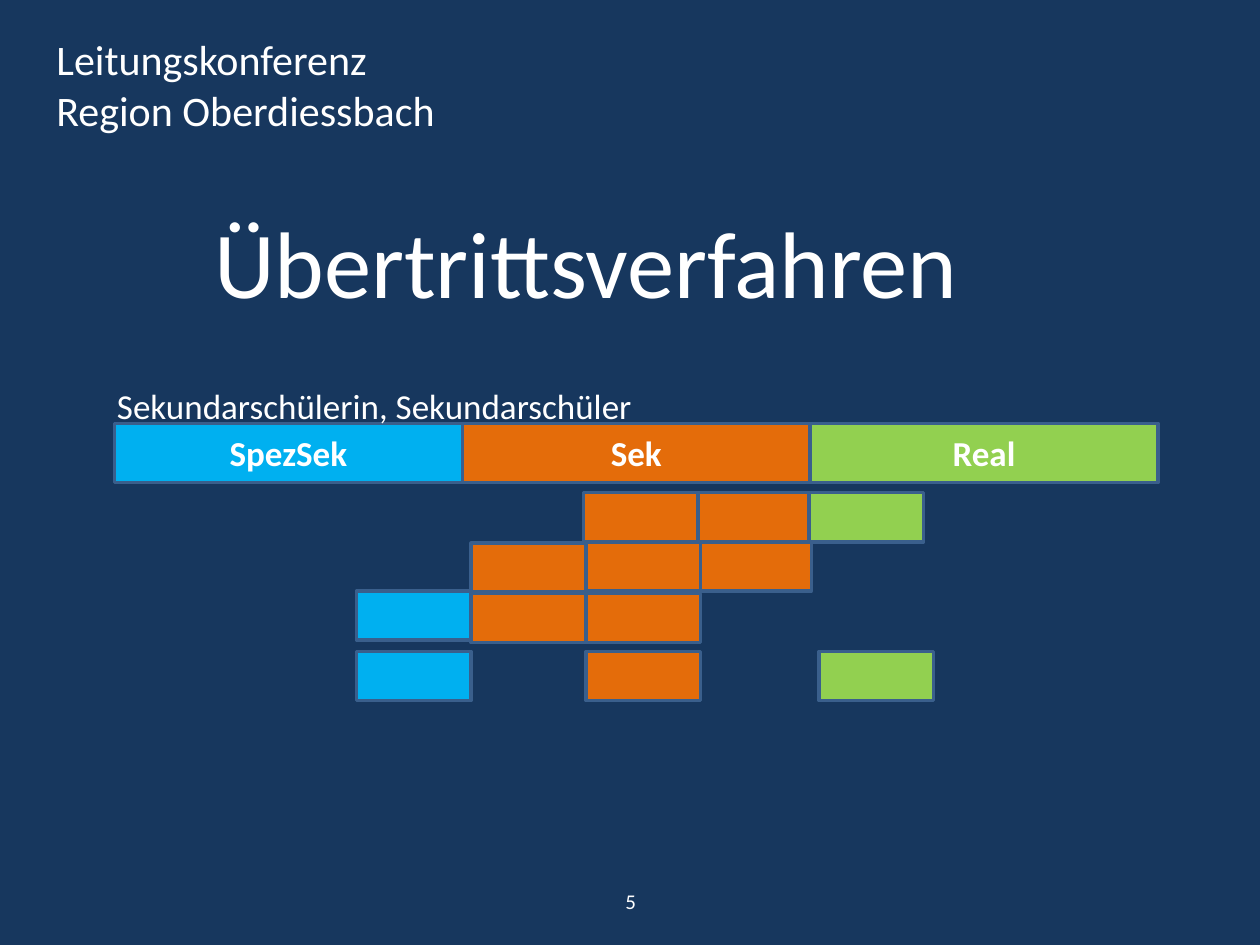
from pptx import Presentation
from pptx.dml.color import RGBColor
from pptx.enum.shapes import MSO_SHAPE as Shape
from pptx.enum.text import MSO_ANCHOR as Anchor, PP_ALIGN as Align
from pptx.util import Inches, Pt

NAVY = RGBColor(0x17, 0x37, 0x5E)
WHITE = RGBColor(0xFF, 0xFF, 0xFF)
BLUE = RGBColor(0x00, 0xB0, 0xF0)
ORANGE = RGBColor(0xE4, 0x6C, 0x0A)
GREEN = RGBColor(0x92, 0xD0, 0x50)
OUTLINE = RGBColor(0x3A, 0x5F, 0x8C)

# Content: texts as (lines, left, top, width, height, size, wrap)
HEADINGS = [
    (["Leitungskonferenz", "Region Oberdiessbach"], 0.35, 0.22, 3.36, 0.91, 24, False),
    (["Übertrittsverfahren"], 1.6, 1.57, 6.19, 1.01, 54, False),
]
SUBTITLE = (["Sekundarschülerin, Sekundarschüler"], 0.83, 3, 4.88, 0.44, 20, True)
PAGE_NUMBER = (["5"], 3.42, 6.95, 3.17, 0.4, 12, True)

LEVELS = [("SpezSek", BLUE), ("Sek", ORANGE), ("Real", GREEN)]
LEVEL_LEFT, LEVEL_TOP, LEVEL_WIDTH, LEVEL_HEIGHT = 0.91, 3.36, 2.76, 0.47

# Subject blocks of each pupil: (left, top, colour), later ones on top
BLOCK_WIDTH, BLOCK_HEIGHT = 0.91, 0.39
PUPILS = [
    [(4.63, 3.91, ORANGE), (5.54, 3.91, ORANGE), (6.42, 3.91, GREEN)],
    [(5.53, 4.3, ORANGE), (4.65, 4.3, ORANGE), (3.74, 4.31, ORANGE)],
    [(2.83, 4.69, BLUE), (3.74, 4.71, ORANGE), (4.65, 4.71, ORANGE)],
    [(2.83, 5.17, BLUE), (4.65, 5.17, ORANGE), (6.5, 5.17, GREEN)],
]


def write(frame, lines, size, align=Align.LEFT, bold=False):
    frame.text = "\n".join(lines)
    for para in frame.paragraphs:
        para.alignment = align
        font = para.font
        font.name, font.size, font.bold = "Calibri", Pt(size), bold
        font.color.rgb = WHITE


def add_text(page, item, align=Align.LEFT, anchor=Anchor.TOP):
    lines, left, top, width, height, size, wrap = item
    box = page.shapes.add_textbox(Inches(left), Inches(top), Inches(width), Inches(height))
    box.text_frame.word_wrap = wrap
    box.text_frame.vertical_anchor = anchor
    write(box.text_frame, lines, size, align)


def add_block(page, left, top, width, height, colour):
    block = page.shapes.add_shape(Shape.RECTANGLE, Inches(left), Inches(top),
                                  Inches(width), Inches(height))
    block.shadow.inherit = False
    block.fill.solid()
    block.fill.fore_color.rgb = colour
    block.line.color.rgb = OUTLINE
    block.line.width = Pt(2)
    return block


deck = Presentation()
deck.slide_width, deck.slide_height = Inches(10), Inches(7.5)
page = deck.slides.add_slide(deck.slide_layouts[6])
page.background.fill.solid()
page.background.fill.fore_color.rgb = NAVY

# Headings and page number
for heading in HEADINGS:
    add_text(page, heading)
add_text(page, PAGE_NUMBER, Align.CENTER, Anchor.MIDDLE)

# School levels side by side
for index, (name, colour) in enumerate(LEVELS):
    level = add_block(page, LEVEL_LEFT + index * LEVEL_WIDTH, LEVEL_TOP,
                      LEVEL_WIDTH, LEVEL_HEIGHT, colour)
    level.text_frame.vertical_anchor = Anchor.MIDDLE
    write(level.text_frame, [name], 20, Align.CENTER, bold=True)

# Subject blocks below the levels
for blocks in PUPILS:
    for left, top, colour in blocks:
        add_block(page, left, top, BLOCK_WIDTH, BLOCK_HEIGHT, colour)

add_text(page, SUBTITLE)

deck.save("out.pptx")
